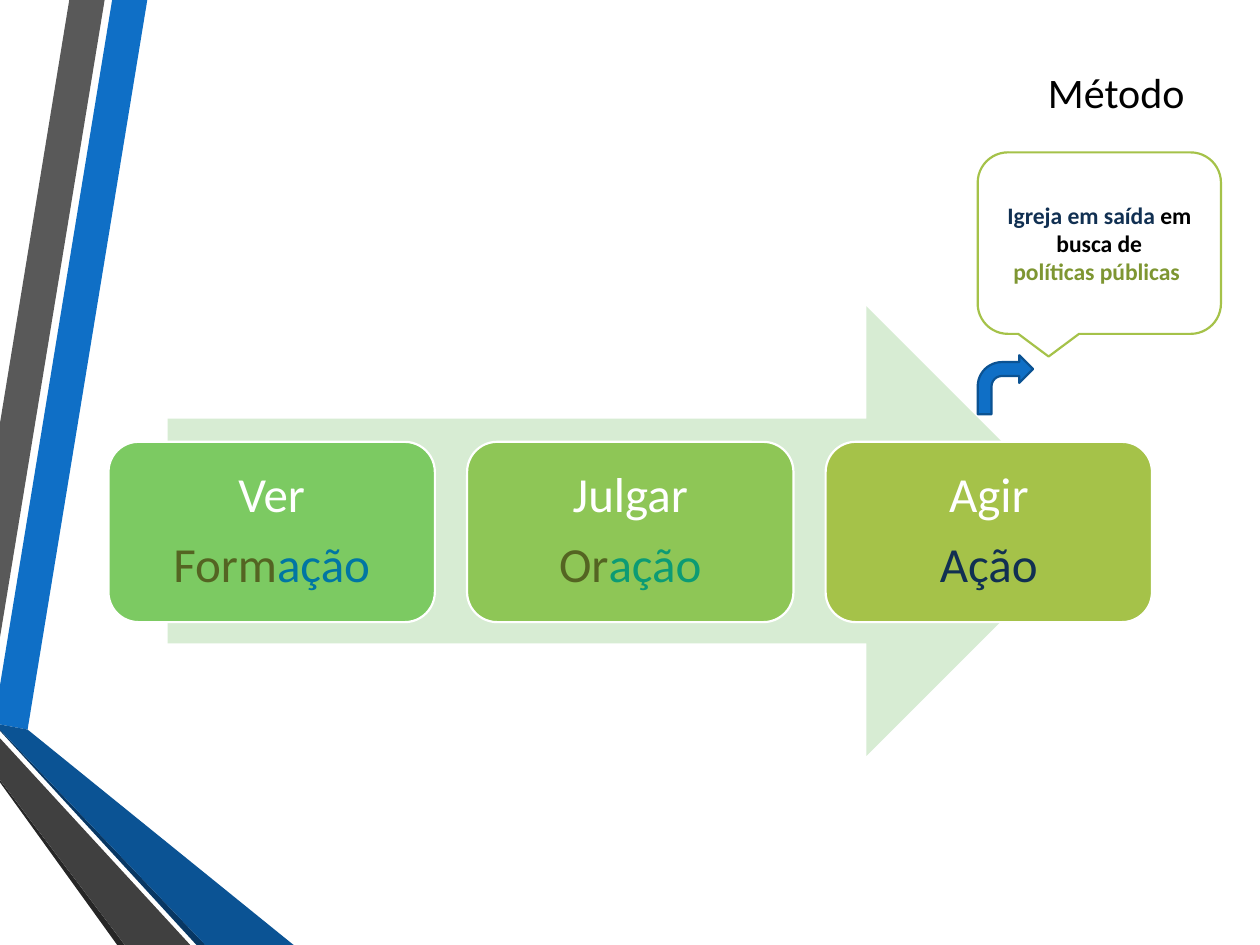
"""Build the "Método" slide: three steps on an arrow, with a callout."""
from pptx import Presentation
from pptx.dml.color import RGBColor
from pptx.enum.shapes import MSO_SHAPE as Shape
from pptx.enum.text import MSO_ANCHOR as Anchor, PP_ALIGN as Align
from pptx.util import Pt

COLORS = {
    "white": "FFFFFF", "black": "000000", "navy": "113052",
    "blue": "0F6FC6", "blue_edge": "0B5292", "blue_dark": "0B5394", "blue_deep": "083763",
    "gray": "595959", "gray_dark": "404040", "gray_deep": "262626",
    "arrow": "D7ECD3", "green": "7CCA62", "leaf": "8EC656", "lime": "A5C249",
    "olive": "546422", "moss": "7E9632", "teal_blue": "0076A3", "teal": "0C9B74",
}


def paint(shape, fill, line=None):
    shape.shadow.inherit = False
    shape.fill.solid()
    shape.fill.fore_color.rgb = RGBColor.from_string(COLORS[fill])
    if line:
        shape.line.color.rgb = RGBColor.from_string(COLORS[line])
        shape.line.width = Pt(1.25)
    else:
        shape.line.fill.background()


def write(shape, paragraphs, size, align=Align.CENTER, bold=False,
          inset=None, line_spacing=None, space_after=None):
    frame = shape.text_frame
    frame.word_wrap = True
    frame.vertical_anchor = Anchor.MIDDLE
    if inset is not None:
        frame.margin_left = frame.margin_right = Pt(inset)
        frame.margin_top = frame.margin_bottom = Pt(inset)
    for index, spans in enumerate(paragraphs):
        para = frame.add_paragraph() if index else frame.paragraphs[0]
        para.alignment = align
        para.line_spacing = line_spacing
        if space_after is not None:
            para.space_after = Pt(space_after)
        for text, color in spans:
            span = para.add_run()
            span.text = text
            span.font.name = "Calibri"
            span.font.size = Pt(size)
            span.font.bold = bold
            span.font.color.rgb = RGBColor.from_string(COLORS[color])


deck = Presentation()
deck.slide_width, deck.slide_height = Pt(720), Pt(540)
page = deck.slides.add_slide(deck.slide_layouts[6])

ribbons = [
    ("blue", [(0, 391.7), (0, 414), (15.8, 416.9), (84.2, 0), (64.1, 0)]),
    ("gray", [(59.8, 0), (39.6, 0), (0, 241.9), (0, 364.3)]),
    ("gray_deep", [(0, 445.7), (0, 447.1), (67, 540), (71.3, 540)]),
    ("blue_deep", [(0, 416.9), (0, 417.6), (112.3, 540), (117.4, 540)]),
    ("blue_dark", [(0, 416.9), (117.4, 540), (167.8, 540), (15.8, 416.9), (0, 414)]),
    ("gray_dark", [(0, 445.7), (71.3, 540), (108.7, 540), (0, 421.9)]),
]
for color, points in ribbons:
    corners = [(Pt(x), Pt(y)) for x, y in points]
    builder = page.shapes.build_freeform(*corners[0])
    builder.add_line_segments(corners[1:], close=True)
    paint(builder.convert_to_shape(), color)

big_arrow = page.shapes.add_shape(Shape.RIGHT_ARROW, Pt(95.8), Pt(175), Pt(527.8), Pt(257))
paint(big_arrow, "arrow")

steps = [
    ("green", "Ver", [("Form", "olive"), ("ação", "teal_blue")]),
    ("leaf", "Julgar", [("Or", "olive"), ("ação", "teal")]),
    ("lime", "Agir", [("Ação", "navy")]),
]
for index, (color, verb, practice) in enumerate(steps):
    box = page.shapes.add_shape(Shape.ROUNDED_RECTANGLE, Pt(62 + 204.9 * index), Pt(252.5),
                                Pt(186.5), Pt(103))
    paint(box, color, "white")
    write(box, [[(verb, "white")], practice], 28, inset=8.4, line_spacing=0.9, space_after=9.8)

bent_arrow = page.shapes.add_shape(Shape.BENT_ARROW, Pt(558.7), Pt(203), Pt(31.7), Pt(33.8))
paint(bent_arrow, "blue", "blue_edge")

callout = page.shapes.add_shape(Shape.ROUNDED_RECTANGULAR_CALLOUT, Pt(558.7), Pt(87.1),
                                Pt(139), Pt(103.7))
paint(callout, "white", "lime")
write(callout, [[("Igreja em saída", "navy"), (" em busca de", "black")],
                [("políticas públicas ", "moss")]], 13.5, bold=True)

title = page.shapes.add_textbox(Pt(36), Pt(21.6), Pt(648), Pt(61.2))
write(title, [[("Método", "black")]], 24, align=Align.RIGHT)

deck.save("out.pptx")
